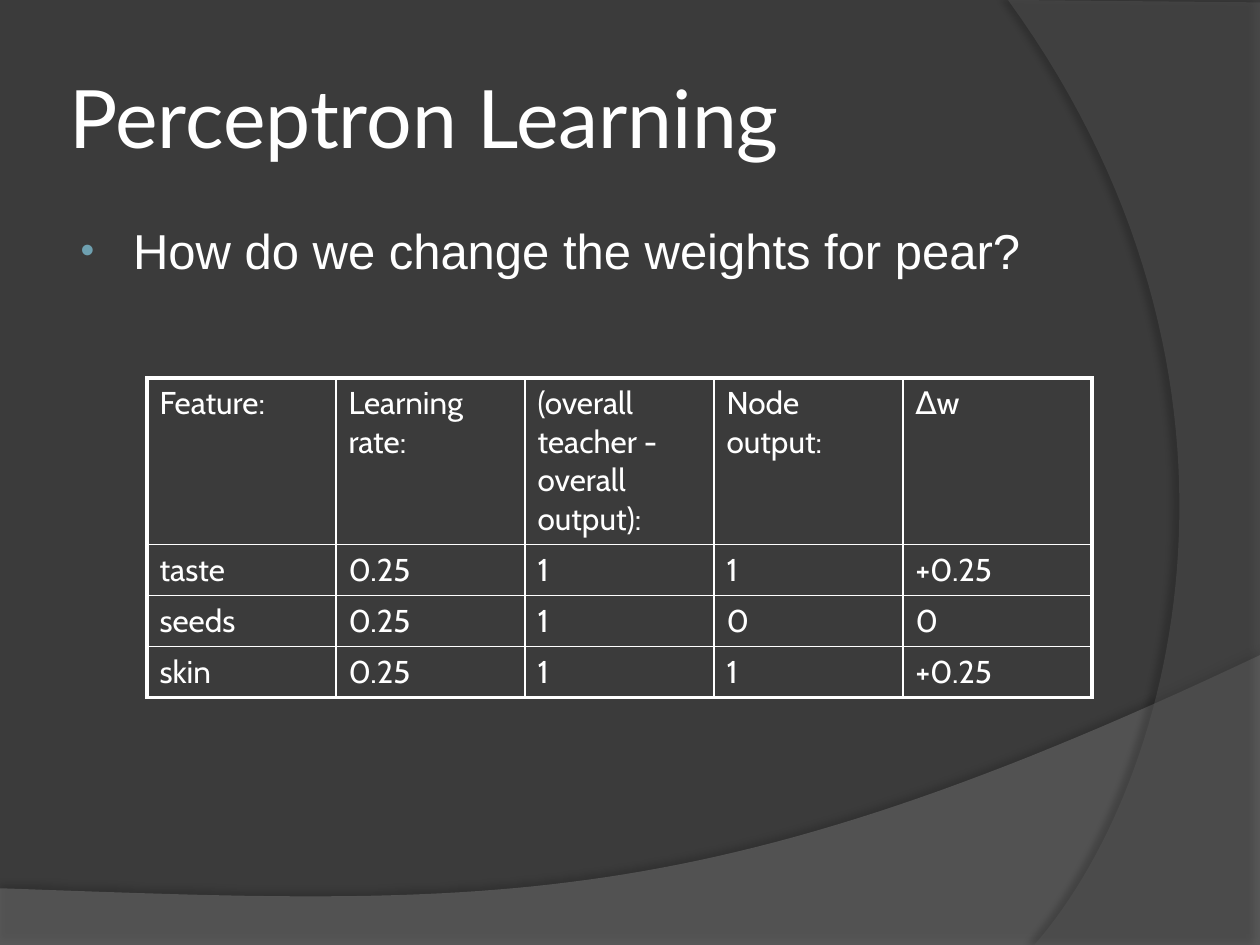
from lxml import etree
from pptx import Presentation
from pptx.dml import color as dml
from pptx.enum import text
from pptx.oxml import ns, parse_xml
from pptx.util import Pt

# Content
TITLE = "Perceptron Learning"
QUESTION = "How do we change the weights for pear?"
ROWS = [
    ("Feature:", "Learning rate:", "(overall teacher - overall output):", "Node output:", "∆w"),
    ("taste", "0.25", "1", "1", "+0.25"),
    ("seeds", "0.25", "1", "0", "0"),
    ("skin", "0.25", "1", "1", "+0.25"),
]

THEME = {
    "background": "3B3B3B", "text": "FFFFFF", "bullet": "6EA0B0",
    "title": {"name": "Lato", "size": Pt(46)},
    "body": {"name": "Arial", "size": Pt(28)},
    "cell": {"name": "Cabin", "size": Pt(18)},
    "outer_line": 2.25, "inner_line": 1,
}

# Layout, in points
WIDTH, HEIGHT = 720, 540
TITLE_BOX = (36, 21.6, 588, 90)
BODY_BOX = (36, 126, 588, 356.4)
TABLE_LEFT, TABLE_TOP, COLUMN_WIDTH = 84, 216, 108
ROW_HEIGHTS = (95.2, 29.1, 29.1, 29.1)

# Background swooshes: corner points, then a Bezier from the last corner
SWOOSHES = [
    {"corners": [(0, 507.6), (0, 540), (720, 540), (720, 374.4)],
     "curve": [(402.5, 524.9), (281.5, 517.7), (0, 507.6)],
     "fill": "7C7C7C", "alpha": 45,
     "shadow": {"alpha": 35, "blur": 4, "distance": 3.5, "angle": 270}},
    {"corners": [(720, 1.4), (720, 540), (591.1, 540)],
     "curve": [(673.2, 445.7), (733, 216), (576, 0)],
     "fill": "595959", "alpha": 40,
     "shadow": {"alpha": 45, "blur": 4, "distance": 4, "angle": 180}},
]


def rgb(value):
    return dml.RGBColor.from_string(value)


def place(shape, box):
    for name, value in zip(("left", "top", "width", "height"), box):
        setattr(shape, name, Pt(value))


def write(paragraph, words, style):
    paragraph.text = words
    for name, value in style.items():
        setattr(paragraph.font, name, value)
    paragraph.font.color.rgb = rgb(THEME["text"])


def bezier(start, control1, control2, end, steps=60):
    for step in range(1, steps + 1):
        t = step / steps
        weights = ((1 - t) ** 3, 3 * t * (1 - t) ** 2, 3 * t * t * (1 - t), t ** 3)
        points = (start, control1, control2, end)
        yield tuple(sum(w * p[axis] for w, p in zip(weights, points)) for axis in (0, 1))


def add_swoosh(slide, corners, curve, fill, alpha, shadow):
    points = [(Pt(x), Pt(y)) for x, y in corners + list(bezier(corners[-1], *curve))]
    builder = slide.shapes.build_freeform(*points[0])
    builder.add_line_segments(points[1:], close=True)
    shape = builder.convert_to_shape()
    shape.line.fill.background()
    shape.fill.solid()
    shape.fill.fore_color.rgb = rgb(fill)
    properties = shape._element.spPr
    colour = properties.find(".//" + ns.qn("a:solidFill"))[0]
    etree.SubElement(colour, ns.qn("a:alpha"), val=str(alpha * 1000))
    properties.append(parse_xml(
        f'<a:effectLst {ns.nsdecls("a")}><a:outerShdw blurRad="{Pt(shadow["blur"])}" '
        f'dist="{Pt(shadow["distance"])}" dir="{shadow["angle"] * 60000}" rotWithShape="0">'
        f'<a:srgbClr val="000000"><a:alpha val="{shadow["alpha"] * 1000}"/></a:srgbClr>'
        '</a:outerShdw></a:effectLst>'))
    return shape


def add_bullet(paragraph):
    properties = paragraph._p.get_or_add_pPr()
    properties.set("marL", str(Pt(33)))
    properties.set("indent", str(Pt(-30)))
    colour = etree.SubElement(properties, ns.qn("a:buClr"))
    etree.SubElement(colour, ns.qn("a:srgbClr"), val=THEME["bullet"])
    etree.SubElement(properties, ns.qn("a:buSzPct"), val="80000")
    etree.SubElement(properties, ns.qn("a:buFont"), typeface="Arial")
    etree.SubElement(properties, ns.qn("a:buChar"), char="•")


def set_borders(cell, outer_sides):
    properties = cell._tc.get_or_add_tcPr()
    for index, (side, is_outer) in enumerate(outer_sides.items()):
        width = THEME["outer_line" if is_outer else "inner_line"]
        properties.insert(index, parse_xml(
            f'<a:{side} {ns.nsdecls("a")} w="{Pt(width)}"><a:solidFill>'
            f'<a:srgbClr val="{THEME["text"]}"/></a:solidFill></a:{side}>'))


def main():
    presentation = Presentation()
    presentation.slide_width, presentation.slide_height = Pt(WIDTH), Pt(HEIGHT)
    slide = presentation.slides.add_slide(presentation.slide_layouts[5])
    slide.background.fill.solid()
    slide.background.fill.fore_color.rgb = rgb(THEME["background"])

    # Title, with the swooshes behind it
    title = slide.shapes.title
    for swoosh in SWOOSHES:
        title._element.addprevious(add_swoosh(slide, **swoosh)._element)
    place(title, TITLE_BOX)
    frame = title.text_frame
    frame.word_wrap = True
    frame.vertical_anchor = text.MSO_ANCHOR.MIDDLE
    for side in ("left", "top", "right", "bottom"):
        setattr(frame, f"margin_{side}", Pt(3.6))
    write(frame.paragraphs[0], TITLE, THEME["title"])
    frame.paragraphs[0].alignment = text.PP_ALIGN.LEFT

    # Question
    body = slide.shapes.add_textbox(*map(Pt, BODY_BOX))
    body.text_frame.word_wrap = True
    paragraph = body.text_frame.paragraphs[0]
    add_bullet(paragraph)
    paragraph.line_spacing = 0.9
    write(paragraph, QUESTION, THEME["body"])

    # Weight table
    row_count, column_count = len(ROWS), len(ROWS[0])
    table = slide.shapes.add_table(
        row_count, column_count, Pt(TABLE_LEFT), Pt(TABLE_TOP),
        Pt(COLUMN_WIDTH * column_count), Pt(sum(ROW_HEIGHTS))).table
    table.first_row = table.horz_banding = False
    for column in table.columns:
        column.width = Pt(COLUMN_WIDTH)
    for r, (values, height) in enumerate(zip(ROWS, ROW_HEIGHTS)):
        table.rows[r].height = Pt(height)
        for c, value in enumerate(values):
            cell = table.cell(r, c)
            cell.fill.background()
            write(cell.text_frame.paragraphs[0], value, THEME["cell"])
            set_borders(cell, {"lnL": c == 0, "lnR": c == column_count - 1,
                               "lnT": r == 0, "lnB": r == row_count - 1})

    presentation.save("out.pptx")


if __name__ == "__main__":
    main()
